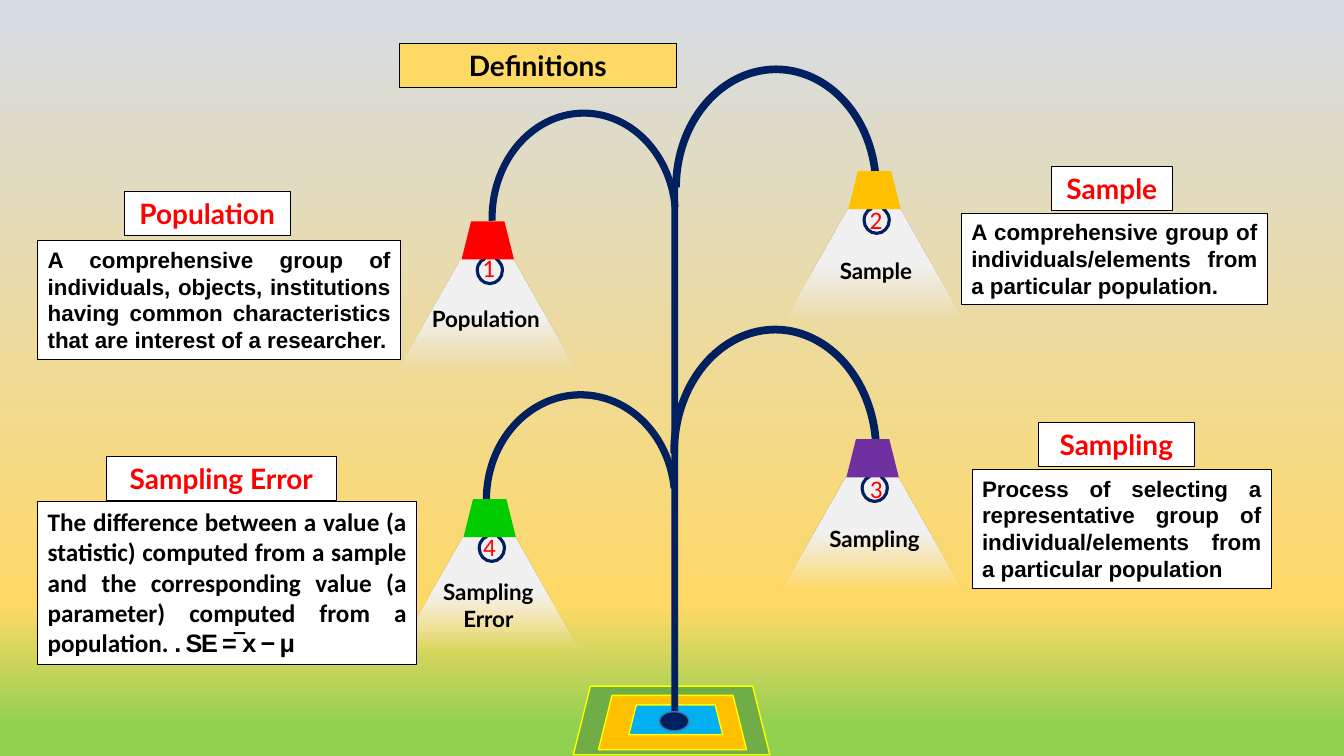
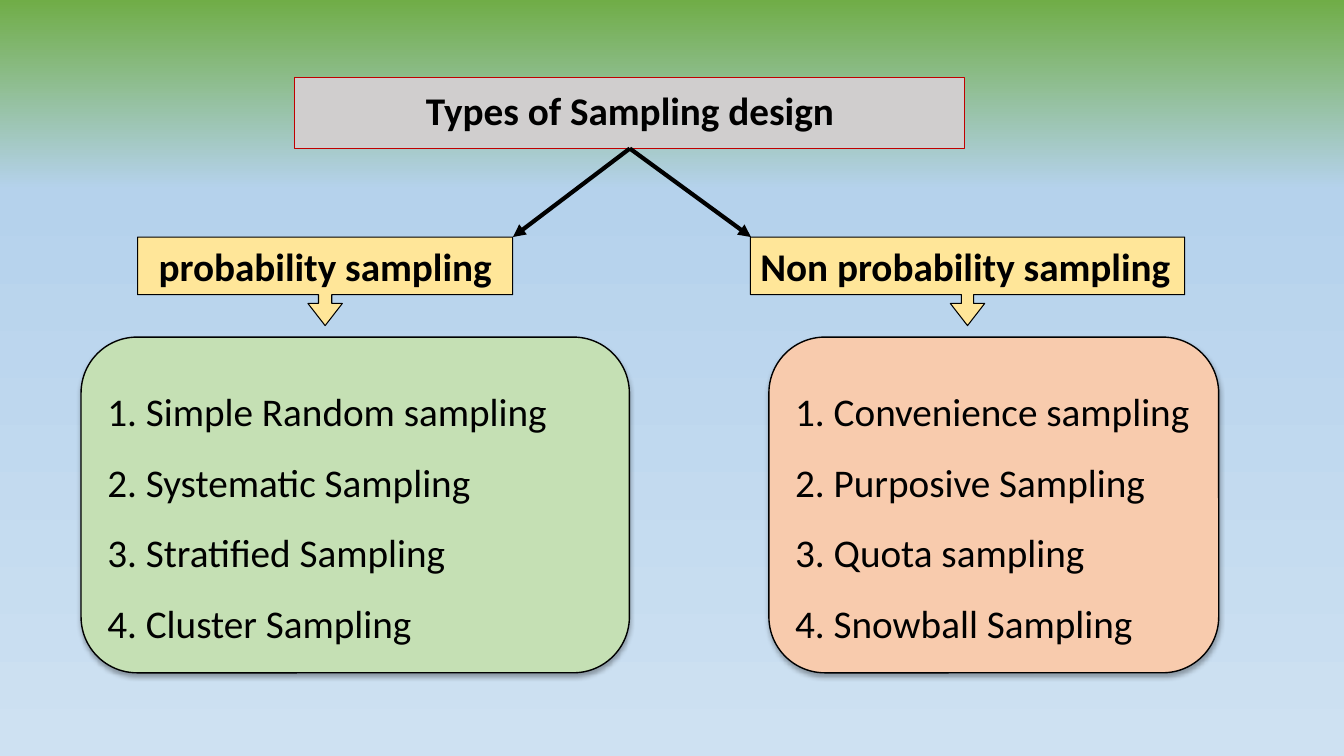
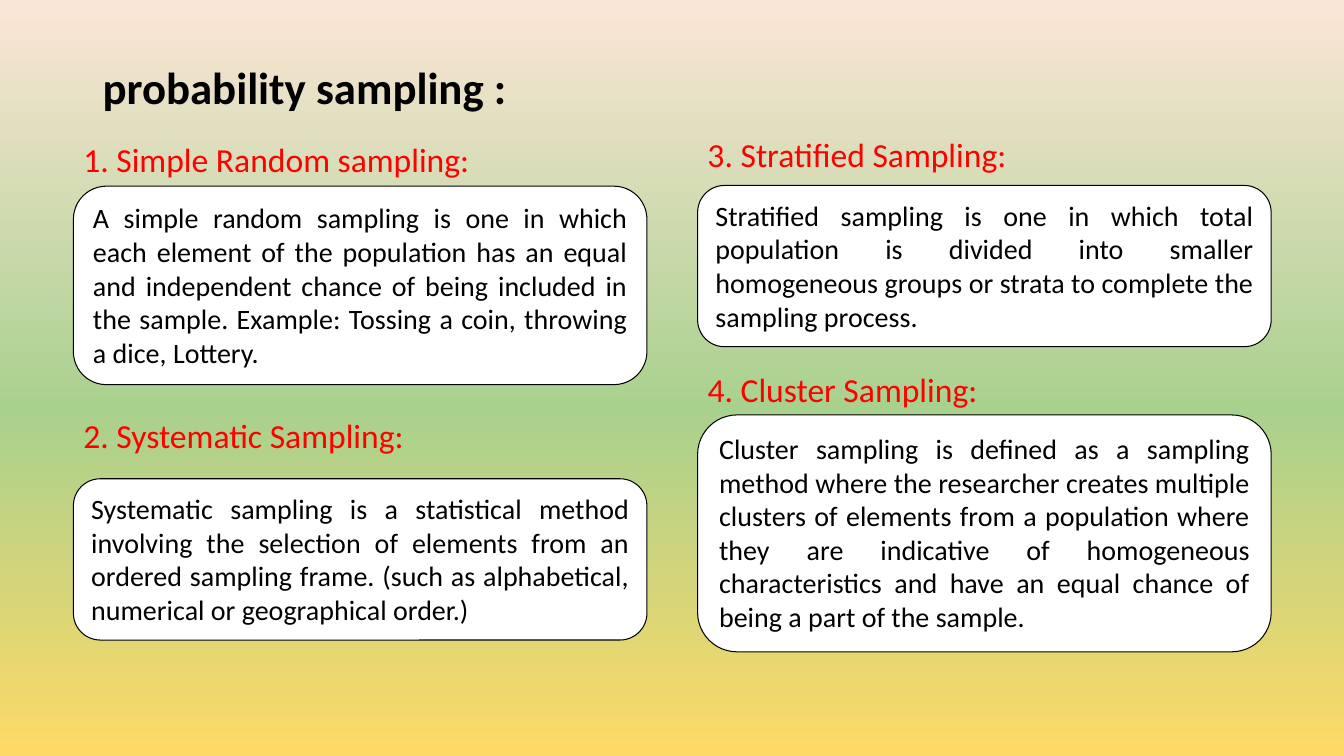
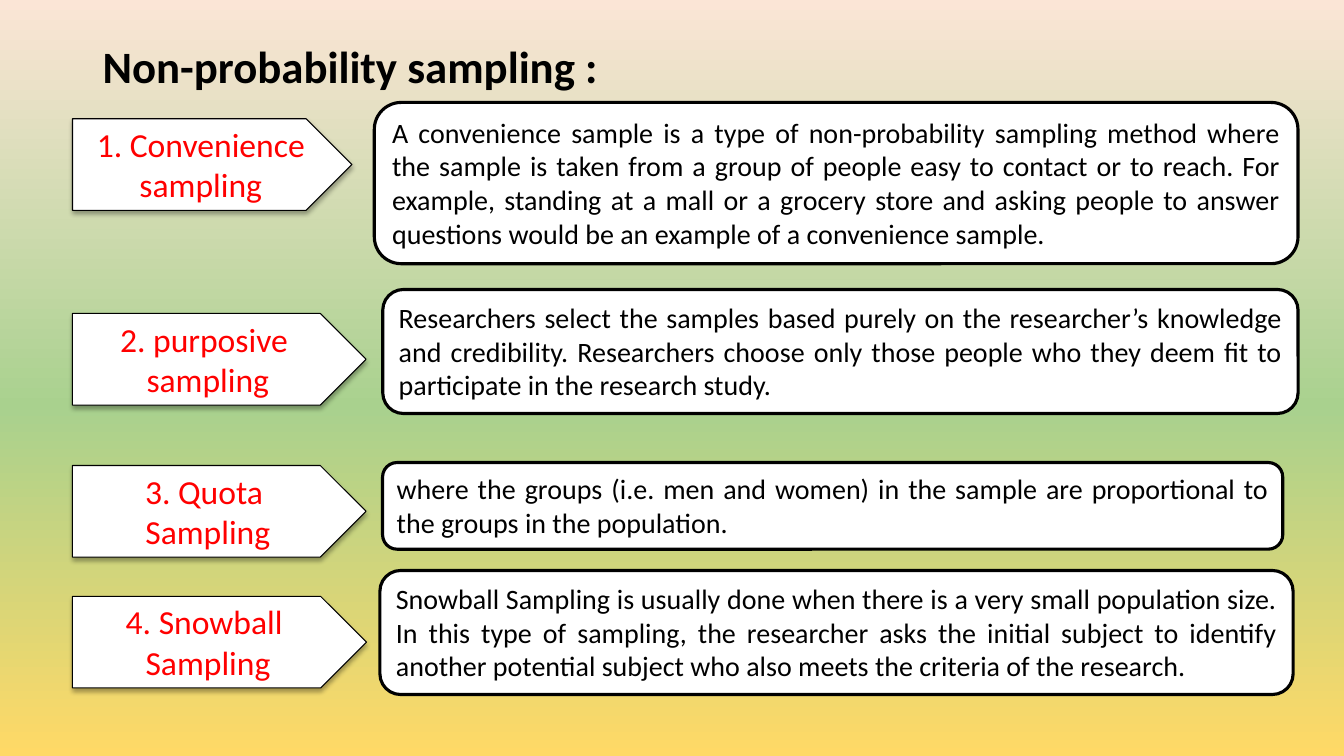
import pptx
import pptx.dml.color
import pptx.enum.shapes
import pptx.enum.text
import pptx.oxml
import pptx.oxml.ns
import pptx.util

Pt = pptx.util.Pt
SHAPE = pptx.enum.shapes.MSO_SHAPE
ALIGN = pptx.enum.text.PP_ALIGN
ANCHOR = pptx.enum.text.MSO_ANCHOR
FIT = pptx.enum.text.MSO_AUTO_SIZE
qn = pptx.oxml.ns.qn
NS = pptx.oxml.ns.nsdecls("a")

COLORS = {
    "black": "000000", "white": "FFFFFF", "red": "FF0000", "dark_red": "C00000",
    "navy": "002060", "steel": "43739E", "amber": "FFC000", "purple": "7030A0",
    "green": "00CC00", "leaf": "70AD47", "blue": "00B0F0", "yellow": "FFFF00",
    "gold": "FFD966", "cream": "FFE699", "grey": "D0CECE", "light": "F2F2F2",
    "mint": "C5E0B4", "peach": "F8CBAD",
}

# Background stops: (position in percent, colour)
LAMP_BACK = [(0, "D6DCE5"), (80, "FFD966"), (96, "92D050")]
TYPES_BACK = [(0, "70AD47"), (25, "B5D2EC"), (100, "CEE1F2")]
METHOD_BACK = [(0, "FBE5D6"), (54, "A9D18E"), (100, "FFD966")]

# Bulb outline: straight neck, four curves of three points each, neck again
BULB_NECK = [(12.2, 0), (13.9, 5.4), (15.3, 6.6)]
BULB_CURVES = [(17, 8.2), (18, 10.6), (18, 13.3),
               (18, 18.4), (14, 22.7), (9, 22.7),
               (4, 22.7), (0, 18.4), (0, 13.3),
               (0, 10.6), (1, 8.2), (2.7, 6.6)]
BULB_END = [(5, 5.2)]


# --- Shared helpers ---
def rgb(name):
    return pptx.dml.color.RGBColor.from_string(COLORS[name])


def set_gradient(fill, element, stops):
    """Top-to-bottom gradient; a third item in a stop is its opacity."""
    fill.gradient()
    fill.gradient_angle = 270
    stop_list = next(element.iter(qn("a:gsLst")))
    for old in list(stop_list):
        stop_list.remove(old)
    for pos, color, *alpha in stops:
        opacity = f'<a:alpha val="{alpha[0] * 1000}"/>' if alpha else ""
        stop_list.append(pptx.oxml.parse_xml(
            f'<a:gs {NS} pos="{pos * 1000}"><a:srgbClr val="{color}">{opacity}</a:srgbClr></a:gs>'))


def add_slide(prs, stops):
    s = prs.slides.add_slide(prs.slide_layouts[6])
    set_gradient(s.background.fill, s.element, stops)
    return s


def style(sp, fill=None, line=None, width=0.75):
    sp.shadow.inherit = False
    if fill:
        sp.fill.solid()
        sp.fill.fore_color.rgb = rgb(fill)
    else:
        sp.fill.background()
    if line:
        sp.line.color.rgb = rgb(line)
        sp.line.width = Pt(width)
    else:
        sp.line.fill.background()


def shape(s, kind, box, fill=None, line=None, width=0.75, adj=()):
    sp = s.shapes.add_shape(kind, *map(Pt, box))
    style(sp, fill, line, width)
    for i, value in enumerate(adj):
        sp.adjustments[i] = value
    return sp


def soft_shadow(sp):
    effects = sp.element.spPr.find(qn("a:effectLst"))
    effects.append(pptx.oxml.parse_xml(
        f'<a:outerShdw {NS} blurRad="{Pt(3.5)}" dist="{Pt(2.2)}" dir="5400000" rotWithShape="0">'
        '<a:srgbClr val="000000"><a:alpha val="32000"/></a:srgbClr></a:outerShdw>'))


def write(sp, lines, size, color="black", bold=False, font="Calibri", align=ALIGN.LEFT,
          anchor=ANCHOR.TOP, wrap=True, spacing=None, grow=True):
    tf = sp.text_frame
    tf.word_wrap = wrap
    tf.vertical_anchor = anchor
    if grow:
        tf.auto_size = FIT.SHAPE_TO_FIT_TEXT
    tf.text = lines
    for p in tf.paragraphs:
        p.alignment = align
        if spacing:
            p.line_spacing = spacing
        p.font.size = Pt(size)
        p.font.name = font
        p.font.bold = bold
        p.font.color.rgb = rgb(color)
    return tf


def text(s, box, lines, size, **options):
    return write(s.shapes.add_textbox(*map(Pt, box)), lines, size, **options)


# --- Slide elements ---
def slide_title(s, top, width, words):
    text(s, (66.2, top, width, 46), words, 32, bold=True, wrap=False)


def rounded_note(s, box, words, width=0.75):
    sp = shape(s, SHAPE.ROUNDED_RECTANGLE, box, "white", "black", width)
    write(sp, words, 20, align=ALIGN.JUSTIFY)


def heading_box(s, box, words, fill="white", color="red"):
    sp = shape(s, SHAPE.RECTANGLE, box, fill, "black")
    write(sp, words, 20, color=color, bold=True, font="Lato", align=ALIGN.CENTER)


def definition(s, heading, heading_at, box, words, font="Arial", size=16):
    sp = shape(s, SHAPE.RECTANGLE, box, "white", "black")
    tf = write(sp, words, size, bold=True, font=font, align=ALIGN.JUSTIFY)
    heading_box(s, (*heading_at, 31.5), heading)
    return tf


def bulb(s, x, y):
    points = BULB_NECK + BULB_CURVES + BULB_END
    fb = s.shapes.build_freeform(Pt(x + 6.2), Pt(y))
    fb.add_line_segments([(Pt(x + px), Pt(y + py)) for px, py in points], close=True)
    sp = fb.convert_to_shape()
    style(sp, line="navy", width=2.25)
    # Turn each three points of the round part into one curve
    lines = list(sp.element.iter(qn("a:lnTo")))
    start = len(BULB_NECK)
    for i in range(start, start + len(BULB_CURVES), 3):
        curve = pptx.oxml.parse_xml(f"<a:cubicBezTo {NS}/>")
        lines[i].addprevious(curve)
        for line in lines[i:i + 3]:
            curve.append(line[0])
            line.getparent().remove(line)


def lamp(s, number, number_at, label, label_box, x, y, color, arc, arc_start=108):
    """A lamp whose shade has its top left corner at x, y."""
    beam = shape(s, SHAPE.TRAPEZOID, (x - 50.4, y + 26.7, 137.5, 88.6), adj=[0.569])
    light = COLORS["light"]
    set_gradient(beam.fill, beam.element, [(44, light), (91, light, 0)])
    bulb(s, x + 11.2, y + 21.8)
    shape(s, SHAPE.BLOCK_ARC, arc, "navy", adj=[arc_start, 211.87, 0.037])
    shape(s, SHAPE.TRAPEZOID, (x, y, 37.4, 27.2), color)
    text(s, (*number_at, 25.2, 28.8), number, 18, color="red")
    text(s, label_box, label, 16, bold=True, font="Lato", align=ALIGN.CENTER, wrap=False)


def arrow(s, origin, x, y):
    c = s.shapes.add_connector(pptx.enum.shapes.MSO_CONNECTOR.STRAIGHT, 0, 0, Pt(x), Pt(y))
    c.begin_connect(origin, 2)
    c.line.color.rgb = rgb("black")
    c.line.width = Pt(3)
    c.line._get_or_add_ln().append(pptx.oxml.parse_xml(f'<a:tailEnd {NS} type="triangle"/>'))
    c._element.spPr.append(pptx.oxml.parse_xml(f"<a:effectLst {NS}/>"))


# --- Slides ---
def definitions_slide(prs):
    s = add_slide(prs, LAMP_BACK)

    # Lamps
    lamp(s, "1", (337.4, 176.9), "Population", (298.1, 214.4, 97.9, 26.6),
         329.7, 158.1, "red", (349, 78.3, 136.1, 154.8), 106.94)
    lamp(s, "2", (614.1, 142.6), "Sample", (589.7, 179.8, 72, 26.6),
         606, 122.2, "amber", (480.2, 46.8, 148.3, 174.2))
    lamp(s, "3", (614.2, 334.3), "Sampling", (575.5, 371.5, 98.6, 26.6),
         604.6, 313.7, "purple", (478.8, 232.7, 149.8, 180), 107.48)
    lamp(s, "4", (338.1, 375.8), "Sampling\nError", (305.3, 409.2, 87.1, 46),
         331.1, 356.5, "green", (344.9, 279.4, 139.7, 154.8))

    # Base
    for box, fill in [((409.5, 490.1, 140.4, 49), "leaf"),
                      ((427.5, 496.7, 105.8, 38.9), "amber"),
                      ((449.2, 503.5, 67, 21.3), "blue")]:
        shape(s, SHAPE.TRAPEZOID, box, fill, "yellow", 1)

    # Definitions
    definition(s, "Sampling", (741.6, 301.7, 111.6), (694.4, 335.5, 213.8, 85),
               "Process of selecting a representative group of individual/elements "
               "from a particular population")
    tf = definition(s, "Sampling Error", (75.8, 326.2, 164.7), (27, 358.2, 270.7, 116.6),
                    "The difference between a value (a statistic) computed from a sample and the "
                    "corresponding value (a parameter) computed from a population. ",
                    font="Calibri", size=18)
    r = tf.paragraphs[0].add_run()
    r.text = ". SE =‾x − μ"
    r.font.name = "Arial"
    r.font._element.set("spc", "-100")
    definition(s, "Population", (88.6, 136.8, 118.8), (27, 172, 259.2, 85),
               "A comprehensive group of individuals, objects, institutions having common "
               "characteristics that are interest of a researcher.")
    definition(s, "Sample", (751, 118.8, 86.4), (686.7, 152.3, 218.7, 65.4),
               "A comprehensive group of individuals/elements from a particular population.")
    heading_box(s, (285.4, 31, 197.6, 31.5), "Definitions", "gold", "black")

    # Pole
    shape(s, SHAPE.RECTANGLE, (479.5, 132.5, 5, 382.3), "navy")
    shape(s, SHAPE.OVAL, (471.1, 508.3, 20.9, 13.7), "navy", "steel", 1)


def types_slide(prs):
    s = add_slide(prs, TYPES_BACK)
    title = shape(s, SHAPE.RECTANGLE, (210.7, 55.1, 478.4, 51), "grey", "dark_red")
    write(title, "Types of Sampling design", 28, bold=True, align=ALIGN.CENTER,
          anchor=ANCHOR.MIDDLE, spacing=0.9, grow=False)

    branches = [
        ("probability sampling", ALIGN.CENTER, 98.3, 267.9, 0.15, 57.9, 391.7, "mint",
         ["Simple Random sampling", "Systematic Sampling",
          "Stratified Sampling", "Cluster Sampling"], 366.4),
        ("Non probability sampling", ALIGN.LEFT, 536, 310.2, 0.138, 549.2, 321.3, "peach",
         ["Convenience sampling", "Purposive Sampling",
          "Quota sampling", "Snowball Sampling"], 536.4),
    ]
    for name, align, x, width, stem, list_x, list_width, fill, methods, tip_x in branches:
        panel = shape(s, SHAPE.ROUNDED_RECTANGLE, (list_x, 240.8, list_width, 239.8),
                      fill, "black", 1)
        soft_shadow(panel)
        lines = "\n".join(f"{i}. {method}" for i, method in enumerate(methods, 1))
        write(panel, lines, 28, anchor=ANCHOR.MIDDLE, spacing=1.5, grow=False)
        callout = shape(s, SHAPE.DOWN_ARROW_CALLOUT, (x, 169.4, width, 63.2),
                        "cream", "black", adj=[stem, 0.194, 0.25, 0.65])
        write(callout, name, 28, bold=True, align=align, wrap=False)
        arrow(s, title, tip_x, 169.3)


def probability_slide(prs):
    s = add_slide(prs, METHOD_BACK)
    slide_title(s, 38.9, 313.2, "probability sampling :")
    left, right = 52.4, 498.3
    methods = [
        (left, 95.8, 298, 133, 141.8, "1. Simple Random sampling:",
         "A simple random sampling is one in which each element of the population has an equal "
         "and independent chance of being included in the sample. Example: Tossing a coin, "
         "throwing a dice, Lottery."),
        (left, 293, 250.6, 342, 115.2, "2. Systematic Sampling:",
         "Systematic sampling is a statistical method involving the selection of elements from "
         "an ordered sampling frame. (such as alphabetical, numerical or geographical order.)"),
        (right, 92.2, 235.4, 132.5, 115.2, "3. Stratified Sampling:",
         "Stratified sampling is one in which total population is divided into smaller "
         "homogeneous groups or strata to complete the sampling process."),
        (right, 260, 214.6, 296.4, 169.2, "4. Cluster Sampling:",
         "Cluster sampling is defined as a sampling method where the researcher creates multiple "
         "clusters of elements from a population where they are indicative of homogeneous "
         "characteristics and have an equal chance of being a part of the sample."),
    ]
    for x, heading_y, heading_width, y, height, heading, words in methods:
        rounded_note(s, (x, y, 409.7, height), words)
        text(s, (x, heading_y, heading_width, 36), heading, 24, color="red", wrap=False)


def non_probability_slide(prs):
    s = add_slide(prs, METHOD_BACK)
    slide_title(s, 23.8, 378.7, "Non-probability sampling :")
    methods = [
        (84.8, 199.6, "1. Convenience sampling", (267.4, 73.2, 659.8, 115.2),
         "A convenience sample is a type of non-probability sampling method where the sample is "
         "taken from a group of people easy to contact or to reach. For example, standing at a "
         "mall or a grocery store and asking people to answer questions would be an example of "
         "a convenience sample."),
        (223.9, 209.7, "2. purposive \nsampling", (273.4, 206.8, 653.8, 88.6),
         "Researchers select the samples based purely on the researcher’s knowledge and "
         "credibility. Researchers choose only those people who they deem fit to participate "
         "in the research study."),
        (332.5, 209.7, "3. Quota \nSampling", (273.3, 330.4, 643, 61.9),
         "where the groups (i.e. men and women) in the sample are proportional to the groups "
         "in the population."),
        (426, 210, "4. Snowball \nSampling", (271.4, 407.5, 652.3, 88.6),
         "Snowball Sampling is usually done when there is a very small population size. In this "
         "type of sampling, the researcher asks the initial subject to identify another "
         "potential subject who also meets the criteria of the research."),
    ]
    for y, width, name, box, words in methods:
        rounded_note(s, box, words, 2.25)
        plate = shape(s, SHAPE.PENTAGON, (51.8, y, width, 65.4), "white", "black")
        soft_shadow(plate)
        write(plate, name, 24, color="red", align=ALIGN.CENTER)


def main():
    prs = pptx.Presentation()
    prs.slide_width, prs.slide_height = Pt(960), Pt(540)
    definitions_slide(prs)
    types_slide(prs)
    probability_slide(prs)
    non_probability_slide(prs)
    prs.save("out.pptx")


if __name__ == "__main__":
    main()
